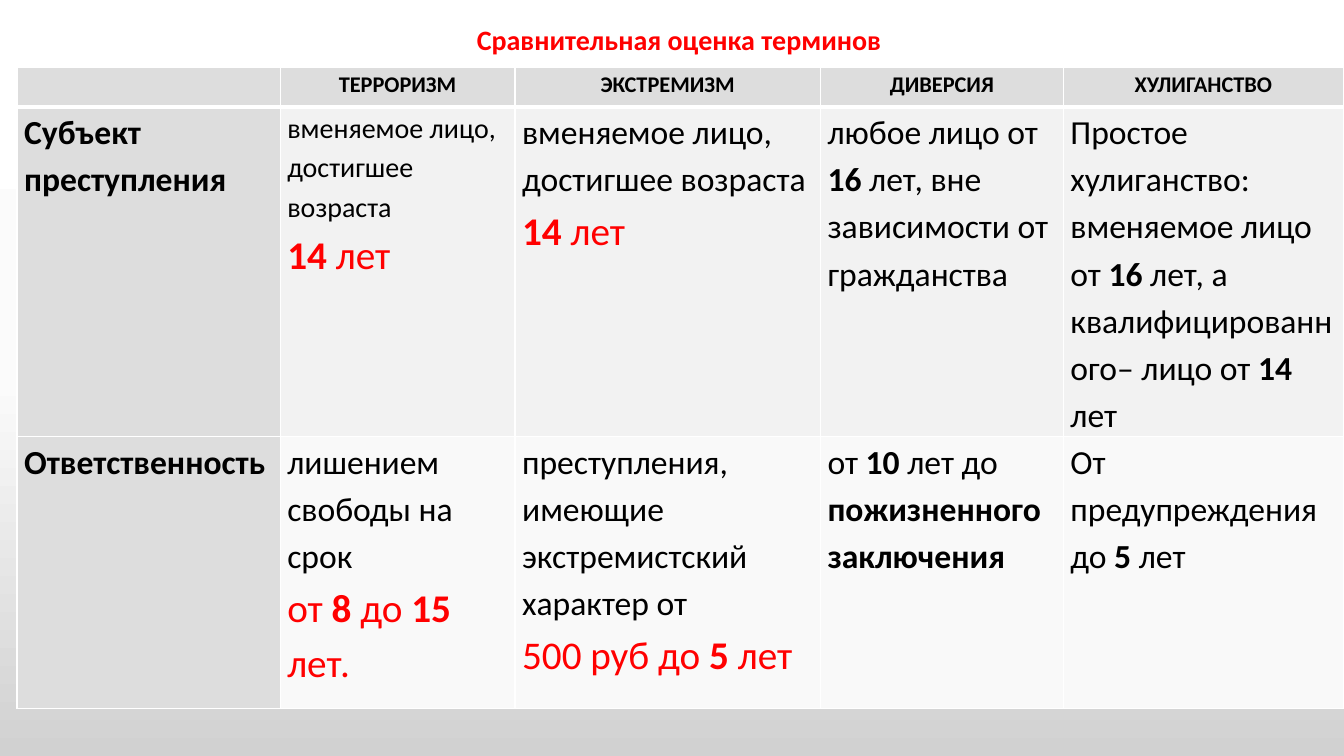
import copy

import pptx
import pptx.dml.color
import pptx.enum.text
import pptx.oxml
import pptx.oxml.ns
import pptx.util

Cm = pptx.util.Cm
Pt = pptx.util.Pt
PP_ALIGN = pptx.enum.text.PP_ALIGN
ANCHOR = pptx.enum.text.MSO_ANCHOR
qn = pptx.oxml.ns.qn

FONT = "Calibri"
BLACK, RED, WHITE = "000000", "FF0000", "FFFFFF"
HEADING_FILL = "DDDDDD"
BODY_FILLS = ["F2F2F2", "F9F9F9"]
COLUMN_SHARES = [2.61, 2.33, 3.03, 2.41, 2.78]
ROW_SHARES = [0.39, 3.25, 2.7]

TERMS = ["", "ТЕРРОРИЗМ", "ЭКСТРЕМИЗМ", "ДИВЕРСИЯ", "ХУЛИГАНСТВО"]
CRITERIA = [
    [
        [("*Субъект преступления*", 24, BLACK)],
        [("вменяемое лицо, достигшее возраста", 20, BLACK), ("*14 *лет", 28, RED)],
        [("вменяемое лицо, достигшее возраста", 24, BLACK), ("*14 *лет", 28, RED)],
        [("любое лицо от *16* лет, вне зависимости от гражданства", 24, BLACK)],
        [("Простое хулиганство: вменяемое лицо от *16* лет, "
          "а квалифицированного– лицо от *14 *лет", 24, BLACK)],
    ],
    [
        [("*Ответственность*", 24, BLACK)],
        [("лишением свободы на срок", 24, BLACK), ("от *8* до *15* лет.", 28, RED)],
        [("преступления, имеющие экстремистский характер от", 24, BLACK),
         ("500 руб до *5* лет", 28, RED)],
        [("от *10 *лет до *пожизненного заключения*", 24, BLACK)],
        [("От предупреждения до *5 *лет", 24, BLACK)],
    ],
]


def rgb(value):
    return pptx.dml.color.RGBColor.from_string(value)


def style_font(font, size, color, bold):
    font.name = FONT
    font.size = Pt(size)
    font.color.rgb = rgb(color)
    font.bold = bold


def paint_background(slide):
    fill = slide.background.fill
    fill.gradient()
    fill.gradient_angle = 270
    first_stop = slide._element.find(".//" + qn("a:gs"))
    first_stop.addnext(copy.deepcopy(first_stop))
    shades = [(0, "FFFFFF"), (0.5, "FBFBFB"), (1, "D1D1D1")]
    for stop, (position, shade) in zip(fill.gradient_stops, shades):
        stop.position = position
        stop.color.rgb = rgb(shade)


def place_heading(slide, left, top, width, height):
    heading = slide.shapes.title
    heading.left, heading.top, heading.width, heading.height = left, top, width, height
    frame = heading.text_frame
    frame.text = "Сравнительная оценка терминов"
    frame.vertical_anchor = ANCHOR.MIDDLE
    frame.auto_size = pptx.enum.text.MSO_AUTO_SIZE.NONE
    line = frame.paragraphs[0]
    line.alignment = PP_ALIGN.CENTER
    line.line_spacing = 0.9
    style_font(line.runs[0].font, 20, RED, True)


def draw_borders(cell, top, bottom):
    properties = cell._tc.get_or_add_tcPr()
    edges = [("lnL", 1), ("lnR", 1), ("lnT", top), ("lnB", bottom)]
    for index, (edge, weight) in enumerate(edges):
        properties.insert(index, pptx.oxml.parse_xml(
            f'<a:{edge} {pptx.oxml.ns.nsdecls("a")} w="{Pt(weight)}">'
            f'<a:solidFill><a:srgbClr val="{WHITE}"/></a:solidFill></a:{edge}>'))


def write_cell(cell, lines, alignment):
    cell.margin_left = cell.margin_right = Cm(0.18)
    cell.margin_top = cell.margin_bottom = 0
    frame = cell.text_frame
    frame.text = "\n".join(text for text, size, color in lines)
    for paragraph, (text, size, color) in zip(frame.paragraphs, lines):
        paragraph.clear()
        paragraph.alignment = alignment
        paragraph.line_spacing = 1.15
        for index, part in enumerate(text.split("*")):
            if part:
                run = paragraph.add_run()
                run.text = part
                style_font(run.font, size, color, index % 2 == 1)


def share_out(tracks, shares, total, dimension):
    for track, share in zip(tracks, shares):
        setattr(track, dimension, round(total * share / sum(shares)))


def place_comparison(slide, left, top, width, height):
    rows = [[[(f"*{term}*", 16, BLACK)] for term in TERMS]] + CRITERIA
    comparison = slide.shapes.add_table(
        len(rows), len(TERMS), left, top, width, height).table
    comparison.first_row = comparison.horz_banding = False
    share_out(comparison.columns, COLUMN_SHARES, width, "width")
    share_out(comparison.rows, ROW_SHARES, height, "height")
    for r, row in enumerate(rows):
        for c, lines in enumerate(row):
            cell = comparison.cell(r, c)
            write_cell(cell, lines, PP_ALIGN.LEFT if r else PP_ALIGN.CENTER)
            cell.fill.solid()
            is_heading = r == 0 or c == 0
            cell.fill.fore_color.rgb = rgb(HEADING_FILL if is_heading else BODY_FILLS[r - 1])
            draw_borders(cell, 3 if r == 1 else 1, 3 if r == 0 else 1)


def main():
    deck = pptx.Presentation()
    deck.slide_width, deck.slide_height = Cm(33.87), Cm(19.05)
    slide = deck.slides.add_slide(deck.slide_layouts[5])
    paint_background(slide)
    place_heading(slide, Cm(2.51), Cm(0.18), Cm(29.21), Cm(1.73))
    place_comparison(slide, Cm(0.43), Cm(1.7), Cm(33.43), Cm(16.1))
    deck.save("out.pptx")


if __name__ == "__main__":
    main()
